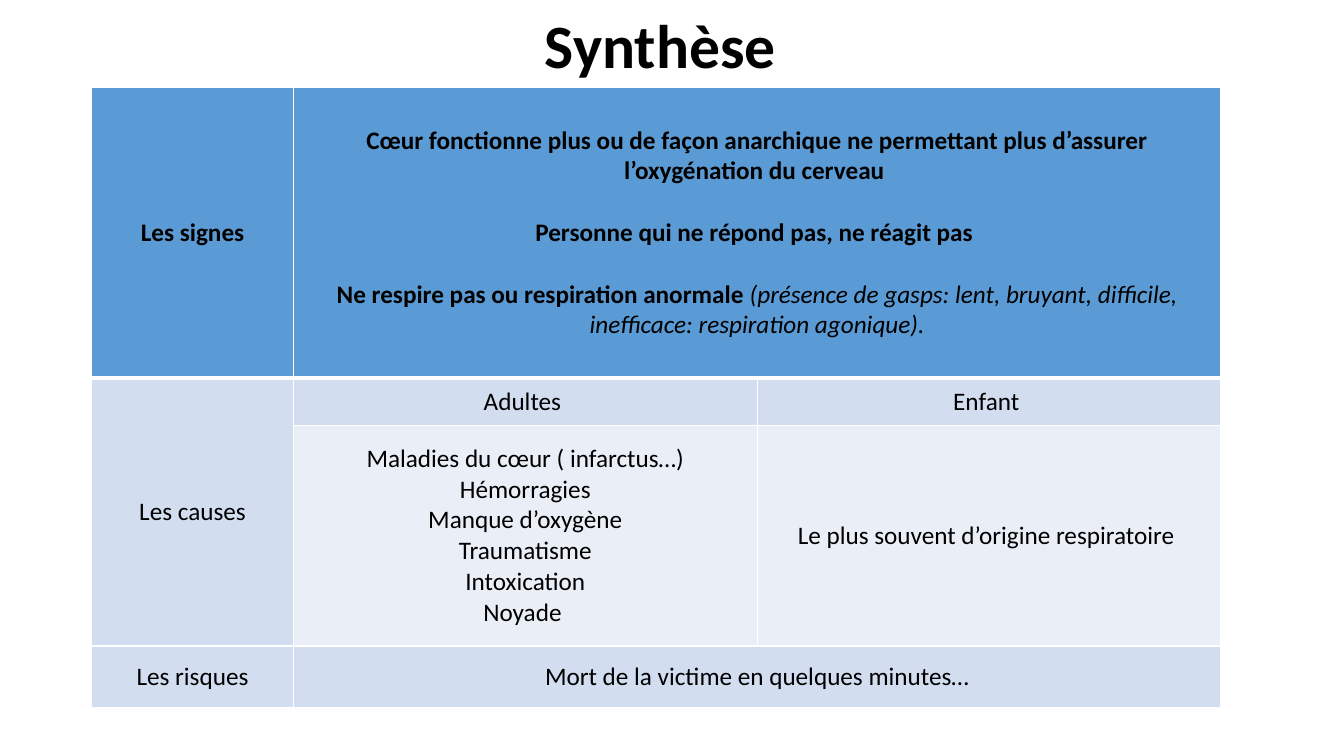
import pptx
import pptx.dml.color
import pptx.enum.text
import pptx.oxml
import pptx.oxml.ns
import pptx.util
from pptx.util import Inches

COLORS = {
    "text": "000000",
    "header": "5B9BD5",
    "band": "D2DEEF",
    "light": "EAEFF7",
    "border": "FFFFFF",
}
FONT = "Calibri"
COLUMN_WIDTHS = [2, 4.6, 4.6]
ROW_HEIGHTS = [2.88, 0.47, 2.19, 0.61]
SIGNS = [
    [("Cœur fonctionne plus ou de façon anarchique ne permettant plus "
      "d’assurer l’oxygénation du cerveau ", True)],
    [("Personne qui ne répond pas, ne réagit pas ", True)],
    [("Ne respire pas ou respiration anormale ", True),
     ("(présence de gasps: lent, bruyant, difficile, "
      "inefficace: respiration agonique).", False)],
]
ADULT_CAUSES = [
    "Maladies du cœur ( infarctus…)",
    "Hémorragies",
    "Manque d’oxygène",
    "Traumatisme",
    "Intoxication",
    "Noyade ",
]
CELLS = [
    (0, 0, [[("Les signes", True)]], "header"),
    (0, 1, SIGNS, "header"),
    (1, 0, ["Les causes"], "band"),
    (1, 1, ["Adultes "], "band"),
    (1, 2, ["Enfant "], "band"),
    (2, 1, ADULT_CAUSES, "light"),
    (2, 2, ["Le plus souvent d’origine respiratoire "], "light"),
    (3, 0, ["Les risques"], "band"),
    (3, 1, ["Mort de la victime en quelques minutes…"], "band"),
]
MERGES = [((0, 1), (0, 2)), ((1, 0), (2, 0)), ((3, 1), (3, 2))]


def rgb(name):
    """Return the named colour."""
    return pptx.dml.color.RGBColor.from_string(COLORS[name])


def style_paragraph(para, size):
    """Centre a paragraph and set its font."""
    para.alignment = pptx.enum.text.PP_ALIGN.CENTER
    para.font.name = FONT
    para.font.size = pptx.util.Pt(size)
    para.font.color.rgb = rgb("text")


def add_title(page, left, top, width, height):
    """Place the slide title in the given box."""
    box = page.shapes.add_textbox(
        Inches(left), Inches(top), Inches(width), Inches(height))
    frame = box.text_frame
    frame.word_wrap = True
    frame.vertical_anchor = pptx.enum.text.MSO_ANCHOR.MIDDLE
    para = frame.paragraphs[0]
    para.text = "Synthèse "
    para.line_spacing = 0.9
    style_paragraph(para, 44)
    para.font.bold = True


def set_borders(cell, bottom, top):
    """Draw white borders around a cell, with widths in points."""
    properties = cell._tc.get_or_add_tcPr()
    widths = {"lnL": 1, "lnR": 1, "lnT": top, "lnB": bottom}
    for position, (side, width) in enumerate(widths.items()):
        properties.insert(position, pptx.oxml.parse_xml(
            f'<a:{side} {pptx.oxml.ns.nsdecls("a")} w="{pptx.util.Pt(width)}">'
            f'<a:solidFill><a:srgbClr val="{COLORS["border"]}"/></a:solidFill>'
            f'</a:{side}>'))


def fill_cell(cell, lines, color):
    """Write centred lines, given as text or as spans, into a filled cell."""
    cell.fill.solid()
    cell.fill.fore_color.rgb = rgb(color)
    cell.vertical_anchor = pptx.enum.text.MSO_ANCHOR.MIDDLE
    frame = cell.text_frame
    for index, line in enumerate(lines):
        para = frame.add_paragraph() if index else frame.paragraphs[0]
        style_paragraph(para, 18)
        if isinstance(line, str):
            para.text = line
            continue
        if index:
            para.space_before = pptx.util.Pt(22)
        for text, strong in line:
            span = para.add_run()
            span.text = text
            span.font.bold = strong
            span.font.italic = not strong


def add_summary_table(page, left, top, width, height):
    """Place the table of signs, causes and risks in the given box."""
    table = page.shapes.add_table(
        len(ROW_HEIGHTS), len(COLUMN_WIDTHS),
        Inches(left), Inches(top), Inches(width), Inches(height)).table
    table.first_row = False
    table.horz_banding = False
    for column, share in zip(table.columns, COLUMN_WIDTHS):
        column.width = Inches(width * share / sum(COLUMN_WIDTHS))
    for row, share in zip(table.rows, ROW_HEIGHTS):
        row.height = Inches(height * share / sum(ROW_HEIGHTS))
    for first, last in MERGES:
        table.cell(*first).merge(table.cell(*last))
    for row, column, lines, color in CELLS:
        fill_cell(table.cell(row, column), lines, color)
    for index, row in enumerate(table.rows):
        for cell in row.cells:
            set_borders(cell, 3 if index == 0 else 1, 3 if index == 1 else 1)


def main():
    """Build and save the deck."""
    deck = pptx.Presentation()
    deck.slide_width = Inches(13.33)
    deck.slide_height = Inches(7.5)
    page = deck.slides.add_slide(deck.slide_layouts[6])
    add_title(page, 0.87, 0.1, 11.5, 0.77)
    add_summary_table(page, 0.91, 0.87, 11.2, 6.15)
    deck.save("out.pptx")


if __name__ == "__main__":
    main()
